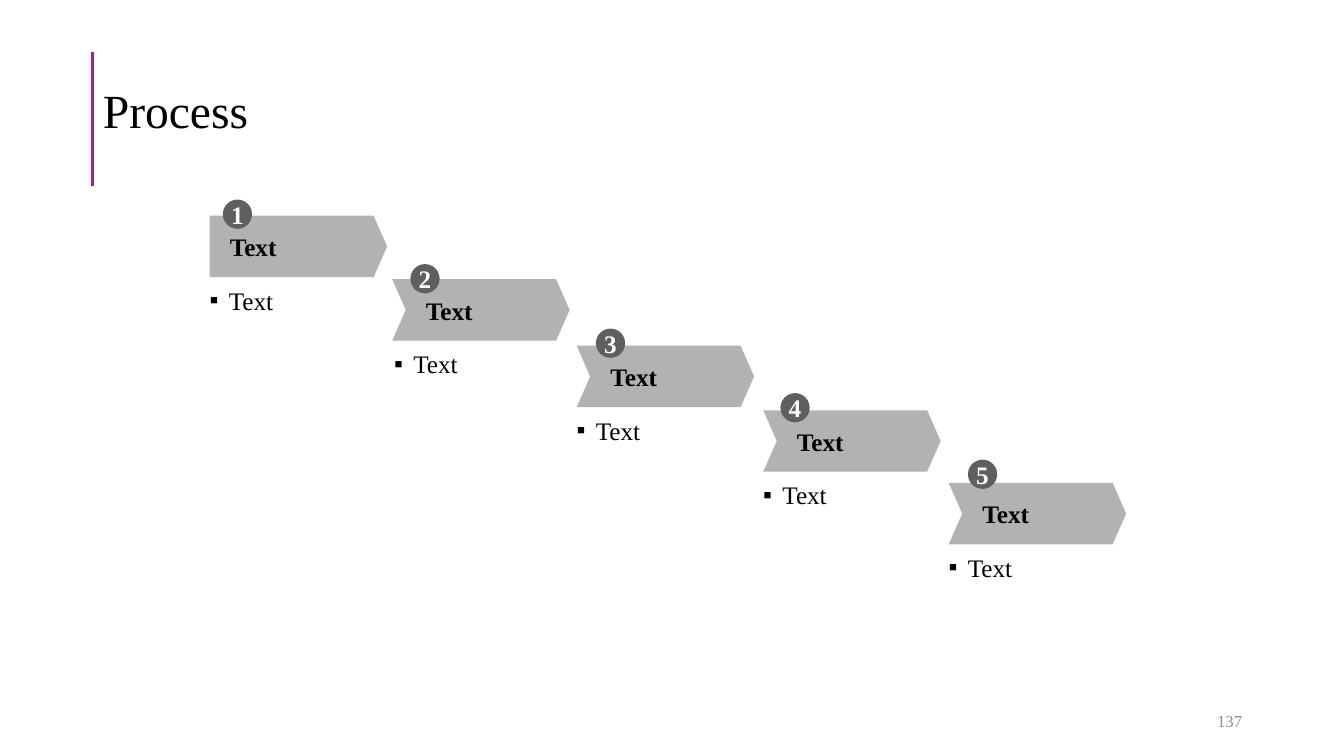
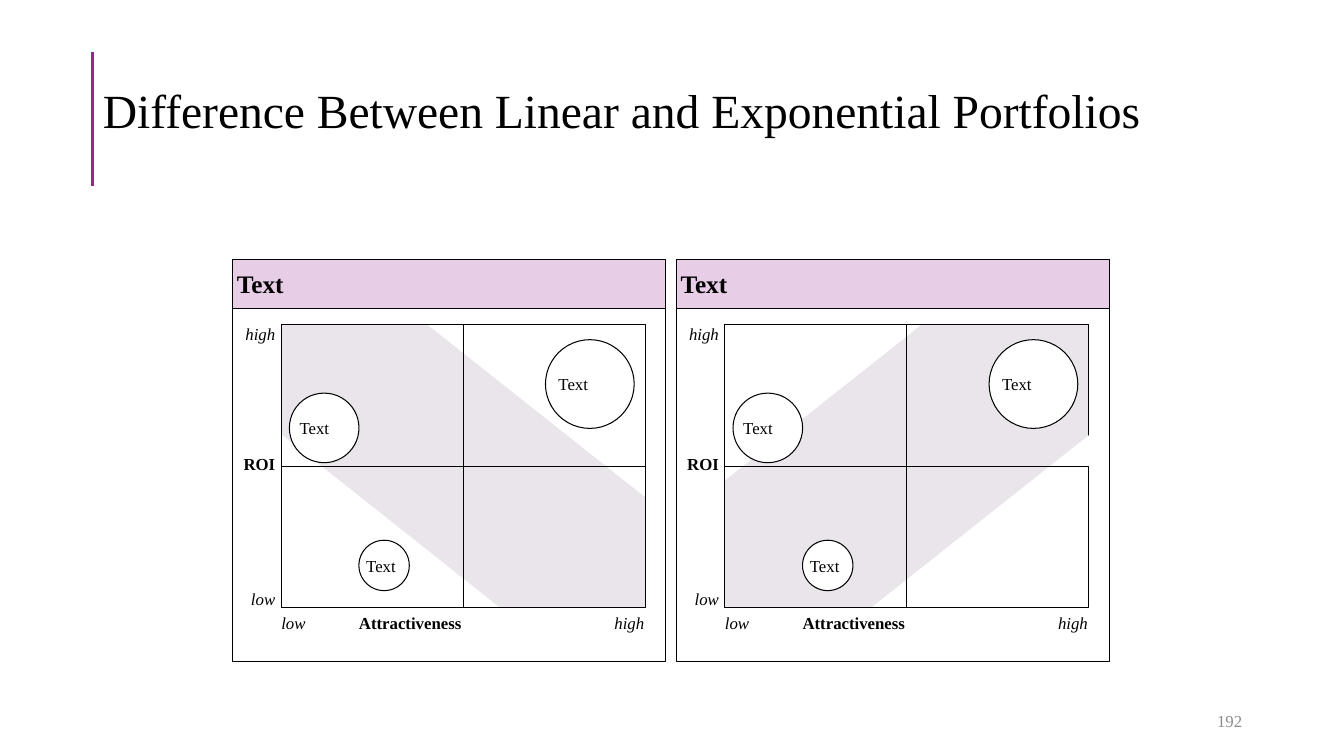
"""Build a stepped process slide and a slide with two portfolio grids."""
import pptx
import pptx.dml.color
import pptx.enum.shapes
import pptx.enum.text
import pptx.oxml.ns
import pptx.util
from lxml import etree

Inches = pptx.util.Inches
Pt = pptx.util.Pt
Color = pptx.dml.color.RGBColor
Kind = pptx.enum.shapes.MSO_SHAPE
Align = pptx.enum.text.PP_ALIGN
Anchor = pptx.enum.text.MSO_ANCHOR
qn = pptx.oxml.ns.qn

FONT = "Times New Roman"
BLACK = Color(0x00, 0x00, 0x00)
WHITE = Color(0xFF, 0xFF, 0xFF)
PURPLE = Color(0x92, 0x27, 0x8F)
LILAC = Color(0xE8, 0xCD, 0xE7)
MIST = Color(0xEA, 0xE5, 0xEB)
SILVER = Color(0xB2, 0xB2, 0xB2)
DARK = Color(0x5F, 0x5F, 0x5F)
GRAY = Color(0x8C, 0x8C, 0x8C)

# Left and top of each arrow, left and top of its badge, left of its note.
STEPS = [
    ("1", "Text", "Text", 2.08, 2.14, 2.21, 1.98, 2.08),
    ("2", "Text", "Text", 3.89, 2.77, 4.07, 2.62, 3.91),
    ("3", "Text", "Text", 5.72, 3.43, 5.91, 3.26, 5.72),
    ("4", "Text", "Text", 7.57, 4.07, 7.74, 3.9, 7.57),
    ("5", "Text", "Text", 9.41, 4.79, 9.6, 4.56, 9.41),
]
STEP_W, STEP_H, BADGE = 1.76, 0.61, 0.29

PANEL_W, PANEL_TOP, HEAD_H, BODY_H = 4.29, 2.57, 0.49, 3.5
GRID_X, GRID_TOP, GRID_W, GRID_H = 0.48, 3.22, 3.61, 2.81
WEDGE_W, WEDGE_H = 2.17, 1.72
PANELS = [
    ("Text", 2.31, [("wedge", 0.48, 4.31, ""), ("wedge", 1.93, 3.22, "HV"),
                    ("row", 0), ("row", 1)]),
    ("Text", 6.71, [("wedge", 0.26, 3.22, "V"), ("row", 0),
                    ("wedge", 1.93, 4.31, "H"), ("row", 1)]),
]
BUBBLES = [("Text", 0.56, 3.9, 0.69), ("Text", 1.25, 5.36, 0.5),
           ("Text", 3.1, 3.37, 0.88)]
LABELS = [
    ("high", 0.04, 3.21, 0.38, Align.RIGHT, False),
    ("ROI", 0.04, 4.5, 0.38, Align.RIGHT, True),
    ("low", 0.04, 5.84, 0.38, Align.RIGHT, False),
    ("low", 0.48, 6.08, 0.38, Align.LEFT, False),
    ("Attractiveness", 1.25, 6.08, 2.08, Align.LEFT, True),
    ("high", 3.7, 6.08, 0.38, Align.RIGHT, False),
]


def write(shape, text, size, color=BLACK, bold=False, italic=False,
          align=Align.LEFT, pad=(0, 0), wrap=True, anchor=Anchor.MIDDLE):
    """Set and format one line of text in a shape."""
    frame = shape.text_frame
    frame.text = text
    frame.word_wrap = wrap
    frame.vertical_anchor = anchor
    frame.margin_left, frame.margin_right = map(Inches, pad)
    frame.margin_top = frame.margin_bottom = 0
    line = frame.paragraphs[0]
    line.alignment = align
    font = line.runs[0].font
    font.name, font.size = FONT, Pt(size)
    font.bold, font.italic = bold, italic
    font.color.rgb = color
    return line


def draw(slide, kind, left, top, width, height, fill=None, edge=False):
    """Add a flat shape with an optional fill and thin black edge."""
    shape = slide.shapes.add_shape(
        kind, Inches(left), Inches(top), Inches(width), Inches(height))
    shape.shadow.inherit = False
    if fill is None:
        shape.fill.background()
    else:
        shape.fill.solid()
        shape.fill.fore_color.rgb = fill
    if edge:
        shape.line.color.rgb = BLACK
        shape.line.width = Pt(0.75)
    else:
        shape.line.fill.background()
    return shape


def add_box(slide, left, top, width, height):
    """Add an empty text box."""
    return slide.shapes.add_textbox(
        Inches(left), Inches(top), Inches(width), Inches(height))


def add_bar(slide, layout):
    """Put the title's accent bar on the shared layout."""
    bar = slide.shapes.add_connector(
        pptx.enum.shapes.MSO_CONNECTOR.STRAIGHT,
        Inches(0.92), Inches(0.52), Inches(0.92), Inches(1.85))
    bar.line.color.rgb = PURPLE
    bar.line.width = Pt(2.25)
    etree.SubElement(bar.element.spPr, qn("a:effectLst"))
    layout.shapes.element.append(bar.element)


def add_slide(deck, layout, title, number):
    """Add a slide with its title and page number."""
    slide = deck.slides.add_slide(layout)
    head = slide.shapes.title
    head.left, head.top = Inches(0.92), Inches(0.4)
    head.width, head.height = Inches(11.5), Inches(1.45)
    line = write(head, title, 34, pad=(0.1, 0.1))
    line.line_spacing = 0.9
    head.text_frame.auto_size = pptx.enum.text.MSO_AUTO_SIZE.NONE
    write(add_box(slide, 9.42, 6.95, 3, 0.4), number, 12, GRAY,
          align=Align.RIGHT, pad=(0.1, 0.1))
    return slide


def add_bullet(line):
    """Give a paragraph a square bullet with a hanging indent."""
    props = line._p.get_or_add_pPr()
    props.set("marL", str(Inches(0.19)))
    props.set("indent", str(-Inches(0.19)))
    etree.SubElement(props, qn("a:buFont"), typeface=FONT)
    etree.SubElement(props, qn("a:buChar"), char="▪")


def add_steps(slide):
    """Draw the falling row of arrows, badges and notes."""
    for index, step in enumerate(STEPS):
        number, name, note, left, top, dot_x, dot_y, note_x = step
        kind = Kind.CHEVRON if index else Kind.PENTAGON
        arrow = draw(slide, kind, left, top, STEP_W, STEP_H, SILVER)
        arrow.adjustments[0] = 0.22
        write(arrow, name, 18, bold=True, pad=(0.2, 0))
        badge = draw(slide, Kind.OVAL, dot_x, dot_y, BADGE, BADGE, DARK)
        write(badge, number, 18, WHITE, bold=True, align=Align.CENTER,
              wrap=False)
        box = add_box(slide, note_x, top + 0.69, 1.63, 0.3)
        add_bullet(write(box, note, 18, anchor=Anchor.TOP))


def add_wedge(slide, left, top, flips):
    """Cut a white corner from the band."""
    wedge = draw(slide, Kind.RIGHT_TRIANGLE, left, top,
                 WEDGE_W, WEDGE_H, WHITE)
    for axis in flips:
        wedge.element.spPr.xfrm.set("flip" + axis, "1")


def add_row(slide, left, row):
    """Outline the two cells of a grid row."""
    width, height = GRID_W / 2, GRID_H / 2
    for col in range(2):
        draw(slide, Kind.RECTANGLE, left + GRID_X + col * width,
             GRID_TOP + row * height, width, height, edge=True)


def add_panel(slide, name, left, layers):
    """Draw one portfolio grid with its header, bubbles and labels."""
    head = draw(slide, Kind.RECTANGLE, left, PANEL_TOP, PANEL_W, HEAD_H,
                LILAC, True)
    write(head, name, 18, bold=True, pad=(0.04, 0.04))
    draw(slide, Kind.RECTANGLE, left, PANEL_TOP + HEAD_H, PANEL_W, BODY_H,
         WHITE, True)
    draw(slide, Kind.RECTANGLE, left + GRID_X, GRID_TOP, GRID_W, GRID_H,
         MIST)
    for kind, *args in layers:
        if kind == "row":
            add_row(slide, left, *args)
        else:
            shift, top, flips = args
            add_wedge(slide, left + shift, top, flips)
    for text, shift, top, size in BUBBLES:
        bubble = draw(slide, Kind.OVAL, left + shift, top, size, size,
                      WHITE, True)
        write(bubble, text, 12)
    for text, shift, top, width, align, bold in LABELS:
        write(add_box(slide, left + shift, top, width, 0.2), text, 12,
              bold=bold, italic=not bold, align=align)


def main():
    """Build and save the deck."""
    deck = pptx.Presentation()
    deck.slide_width, deck.slide_height = Inches(13.33), Inches(7.5)
    layout = deck.slide_layouts[5]
    first = add_slide(deck, layout, "Process", "137")
    add_bar(first, layout)
    add_steps(first)
    second = add_slide(
        deck, layout,
        "Difference Between Linear and Exponential Portfolios", "192")
    for panel in PANELS:
        add_panel(second, *panel)
    deck.save("out.pptx")


if __name__ == "__main__":
    main()
